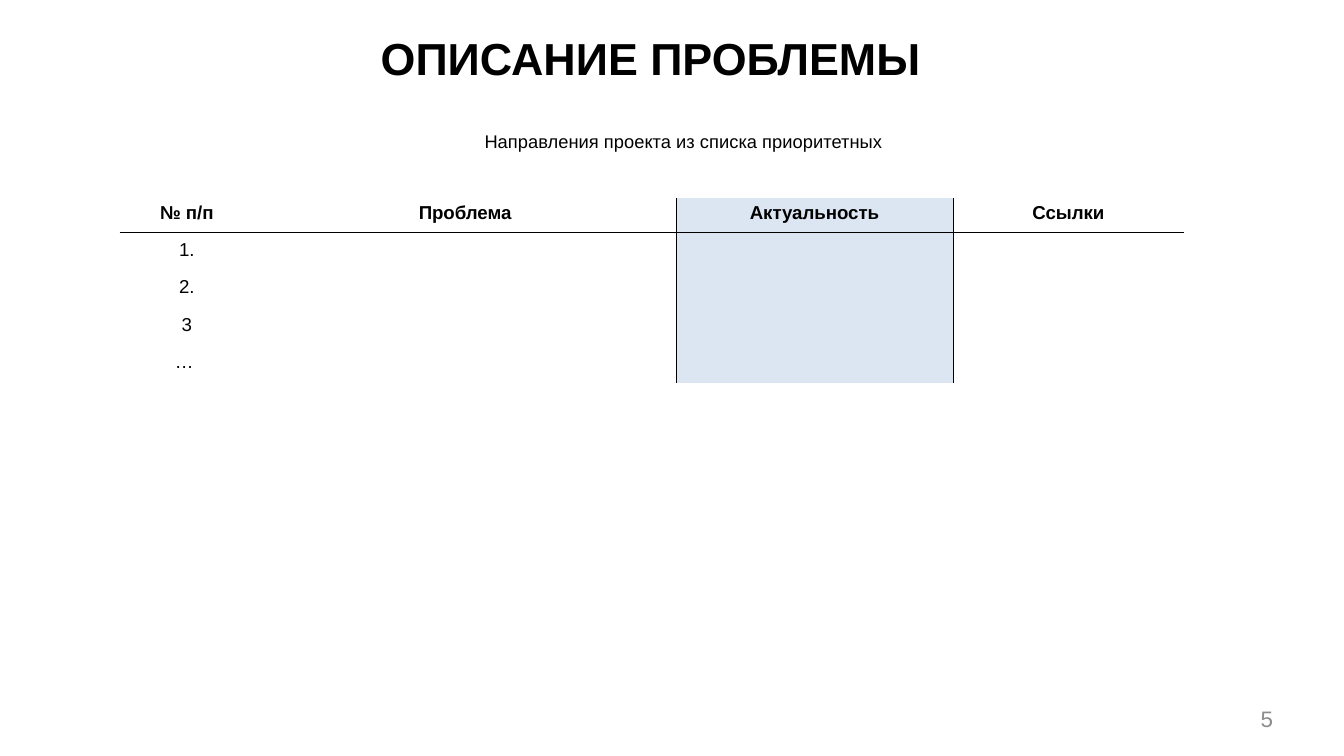
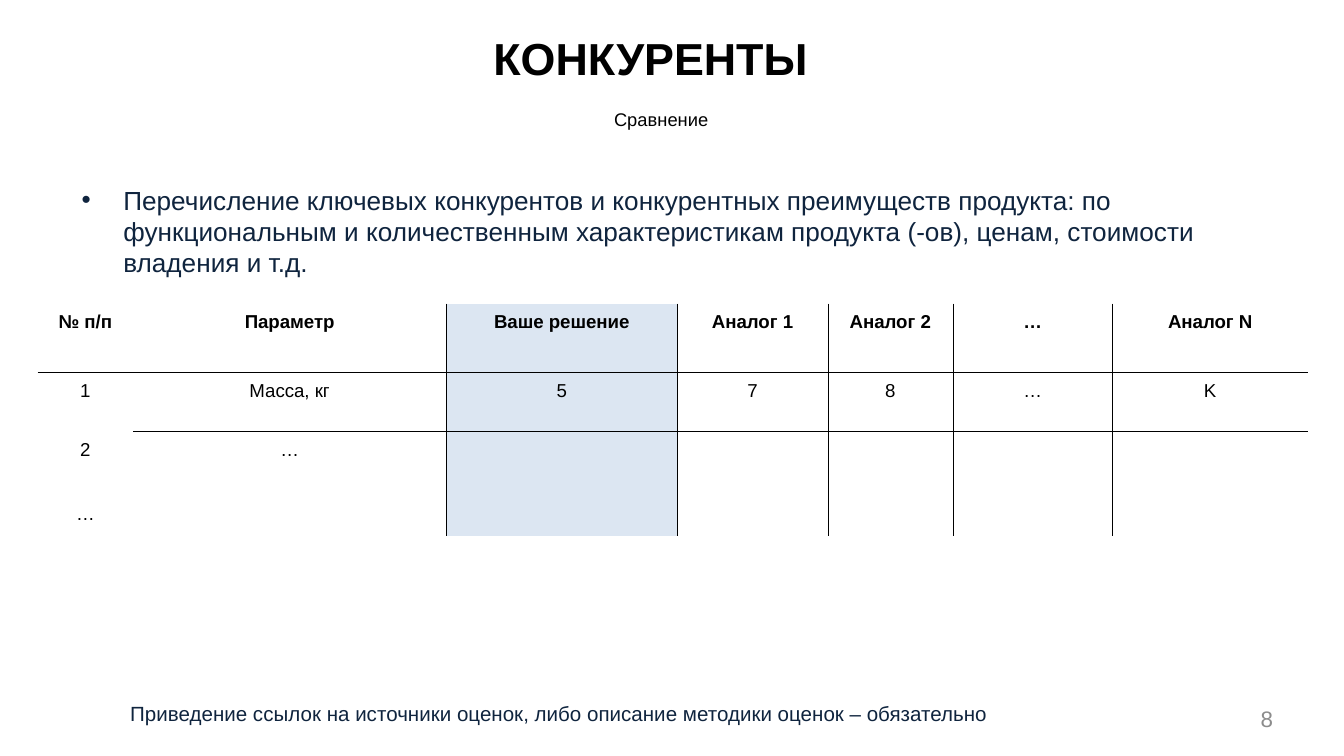
"""Build the problem description and competitor comparison slides."""
from dataclasses import dataclass

from lxml.etree import SubElement
from pptx import Presentation
from pptx.dml.color import RGBColor
from pptx.enum.text import MSO_ANCHOR, MSO_AUTO_SIZE, PP_ALIGN
from pptx.oxml.ns import qn
from pptx.slide import Slide
from pptx.table import _Cell
from pptx.text.text import Font, _Paragraph
from pptx.util import Inches, Pt

COLORS = {
    "text": "000000",
    "note": "0F243E",
    "number": "8C8C8C",
    "highlight": "DCE6F2",
    "rule": "000000",
}
FONT_NAME = "Arial"
PLAIN_TABLE_STYLE = "{2D5ABB26-0587-4C30-8999-92F81FD0307C}"
SLIDE_WIDTH = 10
SLIDE_HEIGHT = SLIDE_WIDTH * 9 / 16
THIN_RULE = 0.25
THICK_RULE = 1
TABLE_FONT_SIZE = 10
HIGHLIGHT_COLUMN = 2
BODY_LINE_SPACING = 1.07


@dataclass(frozen=True)
class Box:
    left: float
    top: float
    width: float
    height: float


@dataclass(frozen=True)
class TextStyle:
    size: float
    color: str = "text"
    bold: bool = False
    align: PP_ALIGN = PP_ALIGN.CENTER
    anchor: MSO_ANCHOR = MSO_ANCHOR.TOP
    fit_height: bool = False
    margin_left: float = 0
    indent: float = 0
    bullet: str = ""
    space_after: float = 0


@dataclass(frozen=True)
class TableContent:
    left: float
    top: float
    columns: tuple[float, ...]
    rows: tuple[float, ...]
    cells: tuple[tuple[str, ...], ...]
    ruled_columns: range
    divider_row: int | None = None
    header_spacing: float = 1.0
    vertical_margin: float = 0.05


TITLE_BOX = Box(1.53, 0.1, 6.62, 0.58)
NUMBER_BOX = Box(8.78, 5.17, 0.79, 0.36)

TITLE = TextStyle(24, bold=True, anchor=MSO_ANCHOR.BOTTOM)
SUBTITLE = TextStyle(9.8)
NUMBER = TextStyle(12, "number", align=PP_ALIGN.RIGHT, anchor=MSO_ANCHOR.MIDDLE)
BULLET_NOTE = TextStyle(14, "note", align=PP_ALIGN.LEFT, fit_height=True,
                        margin_left=0.31, indent=-0.31, bullet="•", space_after=6)
SOURCE_NOTE = TextStyle(11, "note", align=PP_ALIGN.LEFT, fit_height=True,
                        margin_left=0.37)

PROBLEMS = TableContent(
    left=0.89,
    top=1.47,
    columns=(1, 3.14, 2.06, 1.72),
    rows=(0.26, 0.28, 0.28, 0.28, 0.28),
    cells=(
        ("№ п/п", "Проблема", "Актуальность", "Ссылки"),
        ("1.",),
        ("2.",),
        ("3",),
        ("… ",),
    ),
    ruled_columns=range(1, 3),
    vertical_margin=0.04,
)
COMPETITORS = TableContent(
    left=0.28,
    top=2.26,
    columns=(0.71, 2.33, 1.72, 1.12, 0.93, 1.19, 1.45),
    rows=(0.51, 0.44, 0.48, 0.3),
    cells=(
        ("№ п/п", "Параметр", "Ваше решение", "Аналог 1", "Аналог 2", "…", "Аналог N"),
        ("1", "Масса, кг", "5", "7", "8", "…", "K"),
        ("2", "…"),
        ("…",),
    ),
    ruled_columns=range(1, 6),
    divider_row=1,
    header_spacing=BODY_LINE_SPACING,
)


def format_font(font: Font, size: float, color: str, bold: bool) -> None:
    """Apply the deck font with a size, colour and weight."""
    font.name = FONT_NAME
    font.size = Pt(size)
    font.bold = bold
    font.color.rgb = RGBColor.from_string(COLORS[color])


def set_indent(paragraph: _Paragraph, style: TextStyle) -> None:
    """Set the paragraph indents and its bullet, if any."""
    properties = paragraph._p.get_or_add_pPr()
    properties.set("marL", str(Inches(style.margin_left)))
    properties.set("indent", str(Inches(style.indent)))
    if style.bullet:
        SubElement(properties, qn("a:buFont"), typeface=FONT_NAME)
        SubElement(properties, qn("a:buChar"), char=style.bullet)


def add_text(slide: Slide, box: Box, text: str, style: TextStyle) -> None:
    """Add one wrapped text box."""
    shape = slide.shapes.add_textbox(Inches(box.left), Inches(box.top),
                                     Inches(box.width), Inches(box.height))
    text_frame = shape.text_frame
    text_frame.word_wrap = True
    text_frame.vertical_anchor = style.anchor
    if style.fit_height:
        text_frame.auto_size = MSO_AUTO_SIZE.SHAPE_TO_FIT_TEXT
    text_frame.text = text
    paragraph = text_frame.paragraphs[0]
    set_indent(paragraph, style)
    paragraph.alignment = style.align
    if style.space_after:
        paragraph.space_after = Pt(style.space_after)
    format_font(paragraph.runs[0].font, style.size, style.color, style.bold)


def horizontal_rule(content: TableContent, row: int, column: int) -> float:
    """Return the width of the rule below a cell, or zero."""
    if row == 0:
        return THIN_RULE
    return THICK_RULE if row == content.divider_row and column > 0 else 0


def vertical_rule(content: TableContent, column: int) -> float:
    """Return the width of the rule to the right of a column, or zero."""
    return THIN_RULE if column in content.ruled_columns else 0


def set_borders(cell: _Cell, content: TableContent, row: int, column: int) -> None:
    """Draw the visible borders of a cell and hide the others."""
    borders = {
        "a:lnL": vertical_rule(content, column - 1),
        "a:lnR": vertical_rule(content, column),
        "a:lnT": horizontal_rule(content, row - 1, column),
        "a:lnB": horizontal_rule(content, row, column),
    }
    properties = cell._tc.get_or_add_tcPr()
    for tag, width in borders.items():
        line = SubElement(properties, qn(tag), w=str(Pt(width)))
        if width:
            fill = SubElement(line, qn("a:solidFill"))
            SubElement(fill, qn("a:srgbClr"), val=COLORS["rule"])
        else:
            SubElement(line, qn("a:noFill"))


def fill_cell(cell: _Cell, content: TableContent, row: int, column: int) -> None:
    """Write and format one table cell."""
    cell.margin_top = cell.margin_bottom = Inches(content.vertical_margin)
    set_borders(cell, content, row, column)
    if column == HIGHLIGHT_COLUMN:
        cell.fill.solid()
        cell.fill.fore_color.rgb = RGBColor.from_string(COLORS["highlight"])
    else:
        cell.fill.background()
    paragraph = cell.text_frame.paragraphs[0]
    paragraph.alignment = PP_ALIGN.CENTER
    paragraph.line_spacing = BODY_LINE_SPACING if row else content.header_spacing
    texts = content.cells[row]
    if column < len(texts):
        paragraph.text = texts[column]
        format_font(paragraph.runs[0].font, TABLE_FONT_SIZE, "text", row == 0)
    else:
        SubElement(paragraph._p, qn("a:endParaRPr"), sz=str(TABLE_FONT_SIZE * 100))


def add_ruled_table(slide: Slide, content: TableContent) -> None:
    """Add a table with thin rules and a highlighted column."""
    table = slide.shapes.add_table(
        len(content.rows), len(content.columns),
        Inches(content.left), Inches(content.top),
        Inches(sum(content.columns)), Inches(sum(content.rows)),
    ).table
    table.horz_banding = False
    table._tbl.tblPr.find(qn("a:tableStyleId")).text = PLAIN_TABLE_STYLE
    for column, width in enumerate(content.columns):
        table.columns[column].width = Inches(width)
    for row, height in enumerate(content.rows):
        table.rows[row].height = Inches(height)
        for column in range(len(content.columns)):
            fill_cell(table.cell(row, column), content, row, column)


def add_base_slide(presentation: Presentation, title: str, number: str,
                   subtitle: str, subtitle_box: Box) -> Slide:
    """Add a blank slide with its number, title and subtitle."""
    slide = presentation.slides.add_slide(presentation.slide_layouts[6])
    add_text(slide, NUMBER_BOX, number, NUMBER)
    add_text(slide, TITLE_BOX, title, TITLE)
    add_text(slide, subtitle_box, subtitle, SUBTITLE)
    return slide


def add_problem_slide(presentation: Presentation) -> None:
    """Add the problem description slide."""
    slide = add_base_slide(presentation, "ОПИСАНИЕ ПРОБЛЕМЫ", "5",
                           "Направления проекта из списка приоритетных",
                           Box(1.54, 0.92, 7.09, 0.24))
    add_ruled_table(slide, PROBLEMS)


def add_competitor_slide(presentation: Presentation) -> None:
    """Add the competitor comparison slide."""
    slide = add_base_slide(presentation, "КОНКУРЕНТЫ", "8", "Сравнение",
                           Box(1.14, 0.76, 7.56, 0.24))
    add_text(slide, Box(0.51, 1.32, 9.13, 0.81),
             "Перечисление ключевых конкурентов и конкурентных преимуществ "
             "продукта: по функциональным и количественным характеристикам "
             "продукта (-ов), ценам, стоимости владения и т.д.", BULLET_NOTE)
    add_text(slide, Box(0.5, 5.17, 7.05, 0.29),
             "Приведение ссылок на источники оценок, либо описание методики "
             "оценок – обязательно", SOURCE_NOTE)
    add_ruled_table(slide, COMPETITORS)


def main() -> None:
    """Build and save the presentation."""
    presentation = Presentation()
    presentation.slide_width = Inches(SLIDE_WIDTH)
    presentation.slide_height = Inches(SLIDE_HEIGHT)
    add_problem_slide(presentation)
    add_competitor_slide(presentation)
    presentation.save("out.pptx")


if __name__ == "__main__":
    main()
